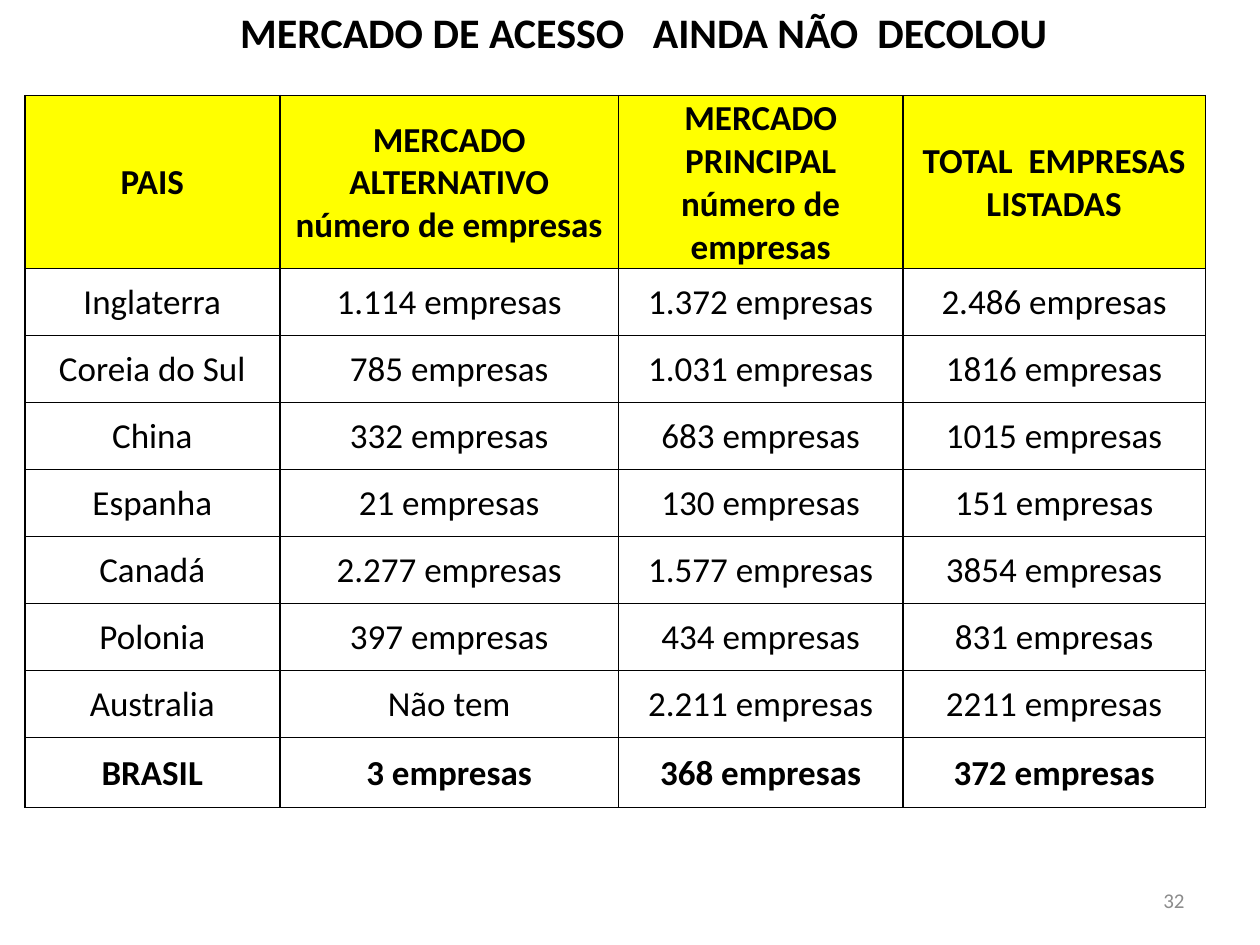
from lxml.etree import SubElement
from pptx import Presentation
from pptx.dml.color import RGBColor
from pptx.enum.text import MSO_ANCHOR as Anchor, PP_ALIGN as Align
from pptx.oxml.ns import qn
from pptx.util import Cm, Pt

COLORS = {"ink": "000000", "header": "FFFF00", "body": "FFFFFF", "muted": "8C8C8C"}
FONT = "Calibri"

HEADERS = ["PAIS", "MERCADO ALTERNATIVO\vnúmero de empresas",
           "MERCADO PRINCIPAL\vnúmero de empresas", "TOTAL  EMPRESAS LISTADAS"]
COUNTRIES = [
    ["Inglaterra", "1.114 empresas", "1.372 empresas", "2.486 empresas"],
    ["Coreia do Sul", "785 empresas", "1.031 empresas", "1816 empresas"],
    ["China", "332 empresas", "683 empresas", "1015 empresas"],
    ["Espanha", "21 empresas", "130 empresas", "151 empresas"],
    ["Canadá", "2.277 empresas", "1.577 empresas", "3854 empresas"],
    ["Polonia", "397 empresas", "434 empresas", "831 empresas"],
    ["Australia", "Não tem", "2.211 empresas", "2211 empresas"],
]
BRAZIL = ["BRASIL", "3 empresas", "368 empresas", "372 empresas"]
COLUMN_WIDTHS = [5.14, 6.83, 5.73, 6.1]
ROW_HEIGHTS = [3.42] + [1.35] * len(COUNTRIES) + [1.41]


def write(frame, text, size=20, bold=False, color="ink", align=Align.CENTER):
    para = frame.paragraphs[0]
    para.text = text
    para.alignment = align
    for span in para.runs:
        span.font.name = FONT
        span.font.size = Pt(size)
        span.font.bold = bold
        span.font.color.rgb = RGBColor.from_string(COLORS[color])


def add_borders(cell, color="ink", width=1):
    properties = cell._tc.get_or_add_tcPr()
    for side in ("a:lnL", "a:lnR", "a:lnT", "a:lnB"):
        line = SubElement(properties, qn(side), w=str(Pt(width)))
        fill = SubElement(line, qn("a:solidFill"))
        SubElement(fill, qn("a:srgbClr"), val=COLORS[color])


def add_title(page, left, top, width, height):
    box = page.shapes.title
    box.left, box.top, box.width, box.height = left, top, width, height
    frame = box.text_frame
    frame.margin_left = Cm(5.53)
    frame.vertical_anchor = Anchor.TOP
    write(frame, "MERCADO DE ACESSO   AINDA NÃO  DECOLOU",
          size=24, bold=True, align=Align.LEFT)


def add_market_table(page, left, top):
    rows = [HEADERS, *COUNTRIES, BRAZIL]
    table = page.shapes.add_table(
        len(rows), len(HEADERS), left, top,
        Cm(sum(COLUMN_WIDTHS)), Cm(sum(ROW_HEIGHTS))).table
    for column, width in zip(table.columns, COLUMN_WIDTHS):
        column.width = Cm(width)
    for row, height, texts in zip(table.rows, ROW_HEIGHTS, rows):
        row.height = Cm(height)
        for cell, text in zip(row.cells, texts):
            cell.margin_left = cell.margin_right = cell.margin_top = Cm(0.03)
            cell.margin_bottom = 0
            cell.vertical_anchor = Anchor.MIDDLE
            add_borders(cell)
            cell.fill.solid()
            fill = "header" if texts is HEADERS else "body"
            cell.fill.fore_color.rgb = RGBColor.from_string(COLORS[fill])
            write(cell.text_frame, text, bold=texts in (HEADERS, BRAZIL))


def add_page_number(page, left, top, width, height):
    frame = page.shapes.add_textbox(left, top, width, height).text_frame
    frame.word_wrap = True
    frame.vertical_anchor = Anchor.MIDDLE
    write(frame, "32", size=12, color="muted", align=Align.RIGHT)


def main():
    deck = Presentation()
    deck.slide_width, deck.slide_height = Cm(25.4), Cm(19.05)
    page = deck.slides.add_slide(deck.slide_layouts.get_by_name("Title Only"))

    # Heading, table and page number
    add_title(page, Cm(-0.69), Cm(0), Cm(25.4), Cm(1.27))
    add_market_table(page, Cm(0.5), Cm(1.93))
    add_page_number(page, Cm(18.2), Cm(17.65), Cm(5.93), Cm(1.01))
    deck.save("out.pptx")


if __name__ == "__main__":
    main()
